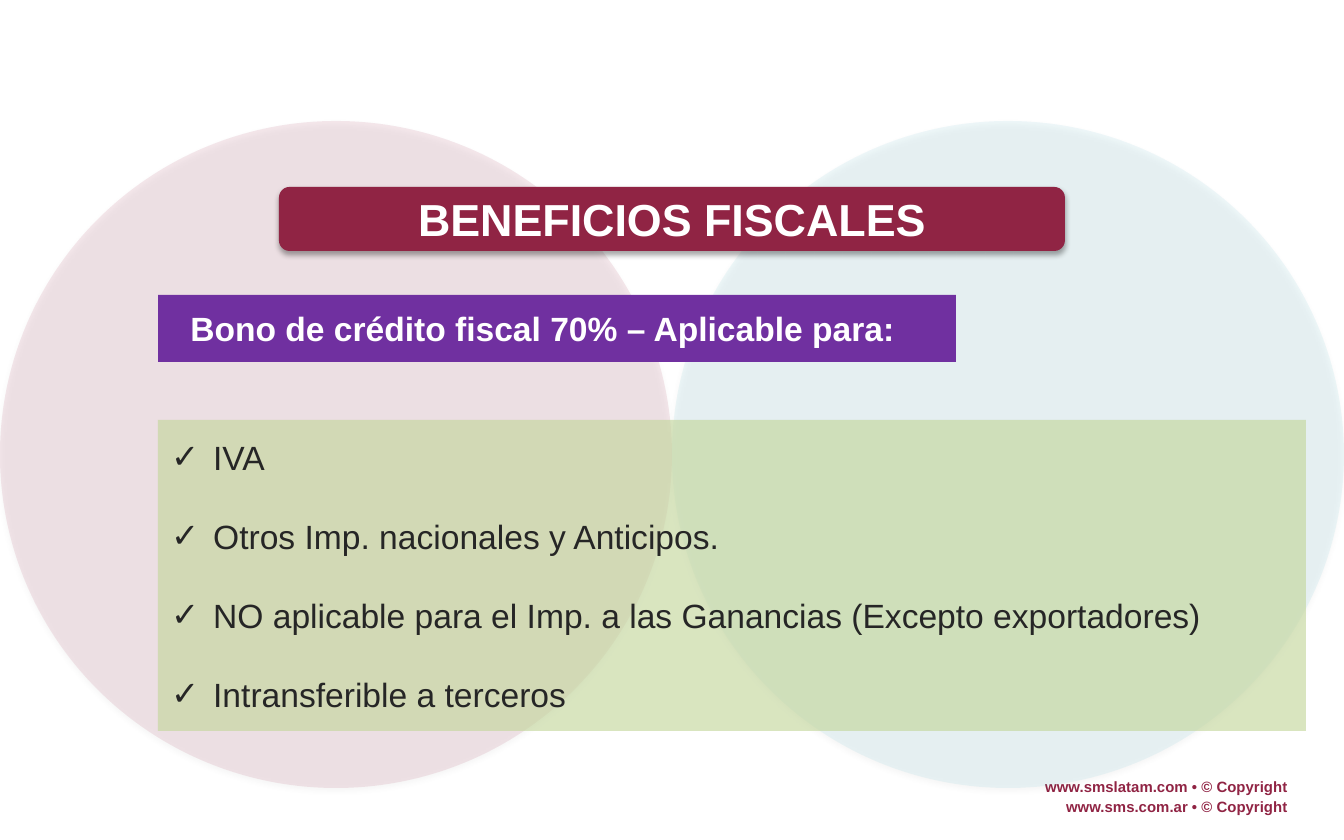
from lxml import etree
from pptx import Presentation
from pptx.dml.color import RGBColor
from pptx.enum.shapes import MSO_SHAPE
from pptx.enum.text import MSO_ANCHOR, PP_ALIGN
from pptx.oxml.ns import qn
from pptx.util import Pt

OVAL, RECT, ROUNDED = MSO_SHAPE.OVAL, MSO_SHAPE.RECTANGLE, MSO_SHAPE.ROUNDED_RECTANGLE
MIDDLE = MSO_ANCHOR.MIDDLE
LEFT, CENTER, RIGHT = PP_ALIGN.LEFT, PP_ALIGN.CENTER, PP_ALIGN.RIGHT

THEME = {
    "font": "Arial",
    "wine": "902444", "rose": "A4244A", "aqua": "61C1D1",
    "purple": "7030A0", "green": "C3D69B", "white": "FFFFFF", "ink": "262626",
    "title": 24, "body": 18, "footer": 8,
}
PX = 9144000 / 1344


def add_panel(kind, box, color, opacity=100, shadow=None):
    """Borderless shape; shadow is (opacity %, blur pt, distance pt), cast downwards."""
    panel = slide.shapes.add_shape(kind, *[round(n * PX) for n in box])
    panel.shadow.inherit = False
    panel.line.fill.background()
    panel.fill.solid()
    panel.fill.fore_color.rgb = RGBColor.from_string(THEME[color])
    properties = panel.element.spPr
    if opacity < 100:
        tint = properties.find(qn("a:solidFill"))[0]
        etree.SubElement(tint, qn("a:alpha"), val=str(opacity * 1000))
    if shadow:
        strength, blur, distance = shadow
        cast = etree.SubElement(
            properties.find(qn("a:effectLst")), qn("a:outerShdw"),
            blurRad=str(Pt(blur)), dist=str(Pt(distance)), dir="5400000", rotWithShape="0")
        shade = etree.SubElement(cast, qn("a:srgbClr"), val="000000")
        etree.SubElement(shade, qn("a:alpha"), val=str(strength * 1000))
    return panel


def write(paragraph, text, size, color, align, bold=True):
    paragraph.text = text
    paragraph.alignment = align
    font = paragraph.font
    font.name, font.size, font.bold = THEME["font"], Pt(THEME[size]), bold
    font.color.rgb = RGBColor.from_string(THEME[color])


prs = Presentation()
prs.slide_width, prs.slide_height = round(1344 * PX), round(840 * PX)
slide = prs.slides.add_slide(prs.slide_layouts[6])

# Copyright lines
for top, notice in ((771, "www.smslatam.com • © Copyright"),
                    (791, "www.sms.com.ar • © Copyright")):
    footer = slide.shapes.add_textbox(*[round(n * PX) for n in (1013, top, 288, 32)])
    footer.text_frame.word_wrap = True
    write(footer.text_frame.paragraphs[0], notice, "footer", "wine", RIGHT)

# Background circles
for left, color in ((672, "aqua"), (0, "rose")):
    add_panel(OVAL, (left, 121, 672, 667), color, opacity=10, shadow=(38, 3.1, 1.6))

# Subtitle, with its text set a little left of centre
subtitle = add_panel(RECT, (158, 295, 798, 67), "purple").text_frame
subtitle.vertical_anchor = MIDDLE
subtitle.margin_right = round(42 * PX)
write(subtitle.paragraphs[0], "Bono de crédito fiscal 70% – Aplicable para:",
      "body", "white", CENTER)

# Title
title = add_panel(ROUNDED, (279, 187, 786, 64), "wine", shadow=(35, 3.1, 1.8)).text_frame
title.vertical_anchor = MIDDLE
write(title.paragraphs[0], "BENEFICIOS FISCALES", "title", "white", CENTER)

# Checklist of uses
checklist = add_panel(RECT, (158, 420, 1148, 311), "green", opacity=63).text_frame
checklist.vertical_anchor = MIDDLE
uses = ["IVA",
        "Otros Imp. nacionales y Anticipos.",
        "NO aplicable para el Imp. a las Ganancias (Excepto exportadores)",
        "Intransferible a terceros"]
indent = round(42 * PX)
for number, use in enumerate(uses):
    item = checklist.add_paragraph() if number else checklist.paragraphs[0]
    if number:
        item.space_before = Pt(20.7)
    layout = item._p.get_or_add_pPr()
    layout.set("marL", str(indent))
    layout.set("indent", str(-indent))
    etree.SubElement(layout, qn("a:buFont"), typeface=THEME["font"])
    etree.SubElement(layout, qn("a:buChar"), char="✓")
    write(item, use, "body", "ink", LEFT, bold=False)

prs.save("out.pptx")
